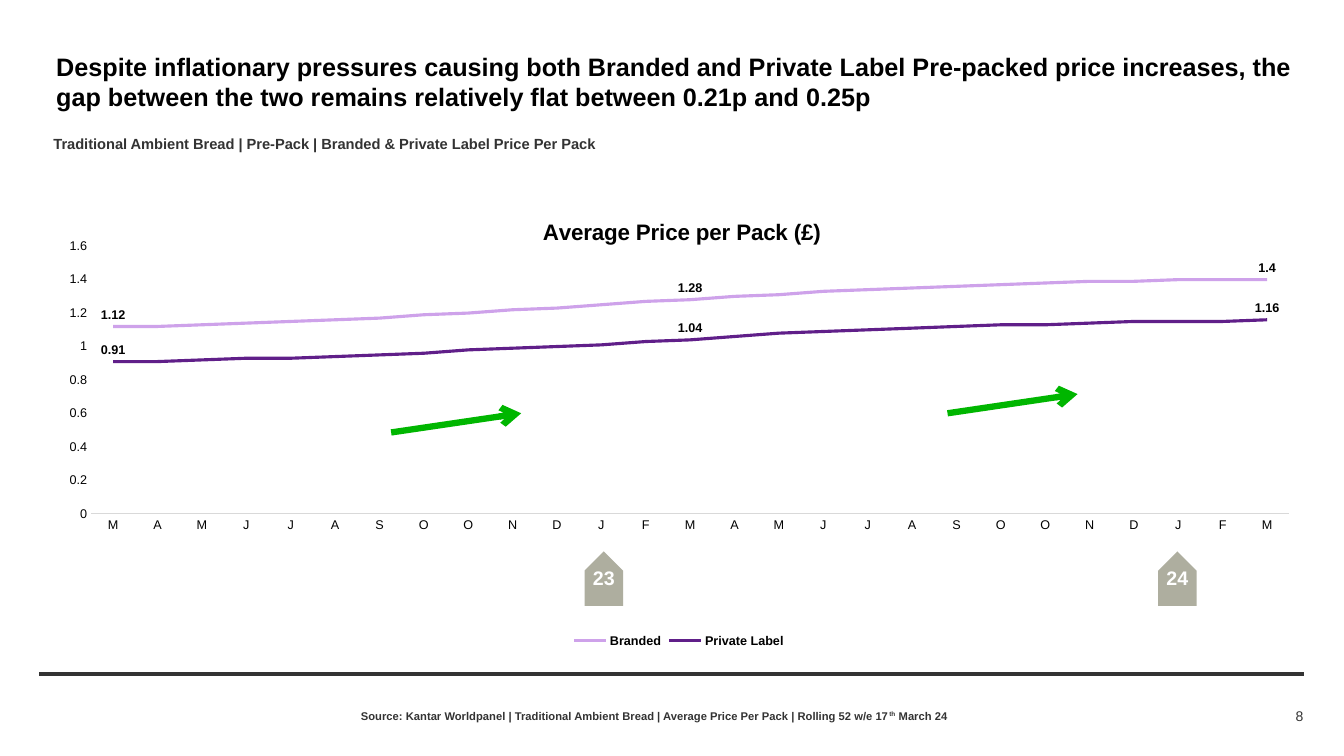
from lxml import etree
from pptx import Presentation
from pptx.chart.data import CategoryChartData
from pptx.dml.color import RGBColor
from pptx.enum.chart import XL_CHART_TYPE, XL_LABEL_POSITION, XL_LEGEND_POSITION, XL_TICK_MARK
from pptx.enum.shapes import MSO_CONNECTOR, MSO_SHAPE
from pptx.enum.text import MSO_ANCHOR, PP_ALIGN
from pptx.oxml.ns import qn
from pptx.util import Pt

LEFT, CENTER, RIGHT = PP_ALIGN.LEFT, PP_ALIGN.CENTER, PP_ALIGN.RIGHT
TOP, MIDDLE = MSO_ANCHOR.TOP, MSO_ANCHOR.MIDDLE
ABOVE = XL_LABEL_POSITION.ABOVE
NO_TICK = XL_TICK_MARK.NONE

BLACK = RGBColor(0x00, 0x00, 0x00)
WHITE = RGBColor(0xFF, 0xFF, 0xFF)
CHARCOAL = RGBColor(0x33, 0x33, 0x33)
AXIS_GREY = RGBColor(0xD9, 0xD9, 0xD9)
LILAC = RGBColor(0xCE, 0xA2, 0xEA)
PURPLE = RGBColor(0x60, 0x1F, 0x89)
STONE = RGBColor(0xAE, 0xAE, 0x9F)
GREEN = RGBColor(0x00, 0xB6, 0x00)
FONT = "Arial"

# Content
HEADLINE = ("Despite inflationary pressures causing both Branded and Private Label "
            "Pre-packed price increases, the gap between the two remains relatively "
            "flat between 0.21p and 0.25p")
SUBTITLE = "Traditional Ambient Bread | Pre-Pack | Branded & Private Label Price Per Pack"
SOURCE = ("Source: Kantar Worldpanel | Traditional Ambient Bread | Average Price Per Pack "
          "| Rolling 52 w/e 17", "th", " March 24")
PAGE_NUMBER = "8"
CHART_TITLE = "Average Price per Pack (£)"
PERIODS = list("MAMJJASOONDJF" * 2 + "M")
PRICES = [
    ("Branded", LILAC,
     [1.12, 1.12, 1.13, 1.14, 1.15, 1.16, 1.17, 1.19, 1.2, 1.22, 1.23, 1.25, 1.27, 1.28,
      1.3, 1.31, 1.33, 1.34, 1.35, 1.36, 1.37, 1.38, 1.39, 1.39, 1.4, 1.4, 1.4]),
    ("Private Label", PURPLE,
     [0.91, 0.91, 0.92, 0.93, 0.93, 0.94, 0.95, 0.96, 0.98, 0.99, 1, 1.01, 1.03, 1.04,
      1.06, 1.08, 1.09, 1.1, 1.11, 1.12, 1.13, 1.13, 1.14, 1.15, 1.15, 1.15, 1.16]),
]
LABELLED_PERIODS = (0, 13, 26)
YEAR_MARKERS = [("23", 431.3), ("24", 841)]       # year, centre x
TREND_ARROWS = [(279.4, 308.9), (676.8, 295.2)]   # start of each arrow
ARROW_RUN, ARROW_RISE = 92.9, 13.7

presentation = Presentation()
presentation.slide_width, presentation.slide_height = Pt(960), Pt(540)
slide = presentation.slides.add_slide(presentation.slide_layouts[6])


def style(font, size, color, bold=False):
    font.name, font.size, font.bold = FONT, Pt(size), bold
    font.color.rgb = color


def add_text(box, runs, size, color, bold=True, align=LEFT, anchor=MIDDLE, inset=(0, 0)):
    frame = slide.shapes.add_textbox(*map(Pt, box)).text_frame
    frame.word_wrap, frame.vertical_anchor = True, anchor
    frame.margin_left = frame.margin_right = Pt(inset[0])
    frame.margin_top = frame.margin_bottom = Pt(inset[1])
    paragraph = frame.paragraphs[0]
    paragraph.alignment = align
    for text in runs:
        paragraph.add_run().text = text
    style(paragraph.font, size, color, bold)
    return paragraph


def add_line(start, end, color, width):
    line = slide.shapes.add_connector(MSO_CONNECTOR.STRAIGHT, *map(Pt, start + end))
    line.line.color.rgb, line.line.width = color, Pt(width)
    etree.SubElement(line.element.spPr, qn("a:effectLst"))
    return line


def place(part, index, **edges):
    """Give a chart part a fixed place, as shares of the chart."""
    for automatic in part.findall(qn("c:layout")):
        part.remove(automatic)
    layout = etree.Element(qn("c:layout"))
    manual = etree.SubElement(layout, qn("c:manualLayout"))
    for name, value in edges.items():
        etree.SubElement(manual, qn("c:" + name)).set("val", str(value))
    part.insert(index, layout)


# Footer rule
add_line((28.1, 481.7), (931.7, 481.7), CHARCOAL, 3)

# Price chart
price_data = CategoryChartData()
price_data.categories = PERIODS
for name, _, values in PRICES:
    price_data.add_series(name, values)
chart = slide.shapes.add_chart(XL_CHART_TYPE.LINE, Pt(38.2), Pt(139.7), Pt(893.5),
                               Pt(326.2), price_data).chart
style(chart.font, 10, BLACK)
chart.has_title = True
heading = chart.chart_title.text_frame.paragraphs[0]
heading.text = CHART_TITLE
style(heading.font, 16, BLACK, True)
chart.has_legend = True
chart.legend.position = XL_LEGEND_POSITION.BOTTOM
chart.legend.include_in_layout = False
style(chart.legend.font, 9, BLACK, True)

for axis in (chart.category_axis, chart.value_axis):
    axis.major_tick_mark = axis.minor_tick_mark = NO_TICK
    axis.has_major_gridlines = False
    style(axis.tick_labels.font, 9, BLACK)
chart.category_axis.format.line.color.rgb = AXIS_GREY
chart.category_axis.format.line.width = Pt(0.75)
chart.value_axis.format.line.fill.background()
chart.value_axis.minimum_scale, chart.value_axis.maximum_scale = 0, 1.6
chart.value_axis.major_unit = 0.2

plot = chart.plots[0]
plot.vary_by_categories = False
for series, (_, color, _) in zip(plot.series, PRICES):
    series.smooth = False
    series.format.line.color.rgb, series.format.line.width = color, Pt(2.25)
    series.data_labels.show_value = False
    for period in LABELLED_PERIODS:
        label = series.points[period].data_label
        style(label.font, 9, BLACK, True)
        label.position = ABOVE

place(chart.element.find(".//" + qn("c:plotArea")), 0, layoutTarget="inner",
      xMode="edge", yMode="edge", x=0.03, y=0.111, w=0.958, h=0.586)
place(chart.chart_title.element if hasattr(chart.chart_title, "element")
      else chart.element.find(".//" + qn("c:title")), 1,
      xMode="edge", yMode="edge", x=0.388, y=0.04)

# Headings
add_text((38.2, 95, 590.4, 15.8), [SUBTITLE], 10.5, CHARCOAL)
add_text((33.1, 33.1, 902.9, 49.7), [HEADLINE], 18, BLACK, anchor=TOP, inset=(7.2, 3.6))

# Source and page number
source = add_text((257.8, 503.3, 590.4, 15.8), SOURCE, 8, CHARCOAL)
source.runs[1].font._element.set("baseline", "30000")
add_text((854.6, 503.3, 76.3, 15.8), [PAGE_NUMBER], 10, CHARCOAL, bold=False, align=RIGHT)

# Year markers: pentagons turned to point up
LENGTH, BREADTH, MIDDLE_Y = 38.9, 27.4, 413.3
for year, x in YEAR_MARKERS:
    marker = slide.shapes.add_shape(MSO_SHAPE.PENTAGON, Pt(x - LENGTH / 2),
                                    Pt(MIDDLE_Y - BREADTH / 2), Pt(LENGTH), Pt(BREADTH))
    marker.rotation = 270
    marker.shadow.inherit = False
    marker.fill.solid()
    marker.fill.fore_color.rgb = STONE
    marker.line.fill.background()
    add_text((x - 17, 404.6, 34, 17.3), [year], 14, WHITE, align=CENTER, anchor=TOP)

# Trend arrows
for x, y in TREND_ARROWS:
    arrow = add_line((x, y), (x + ARROW_RUN, y - ARROW_RISE), GREEN, 4.5)
    etree.SubElement(arrow.line._get_or_add_ln(), qn("a:tailEnd")).set("type", "arrow")

presentation.save("out.pptx")
